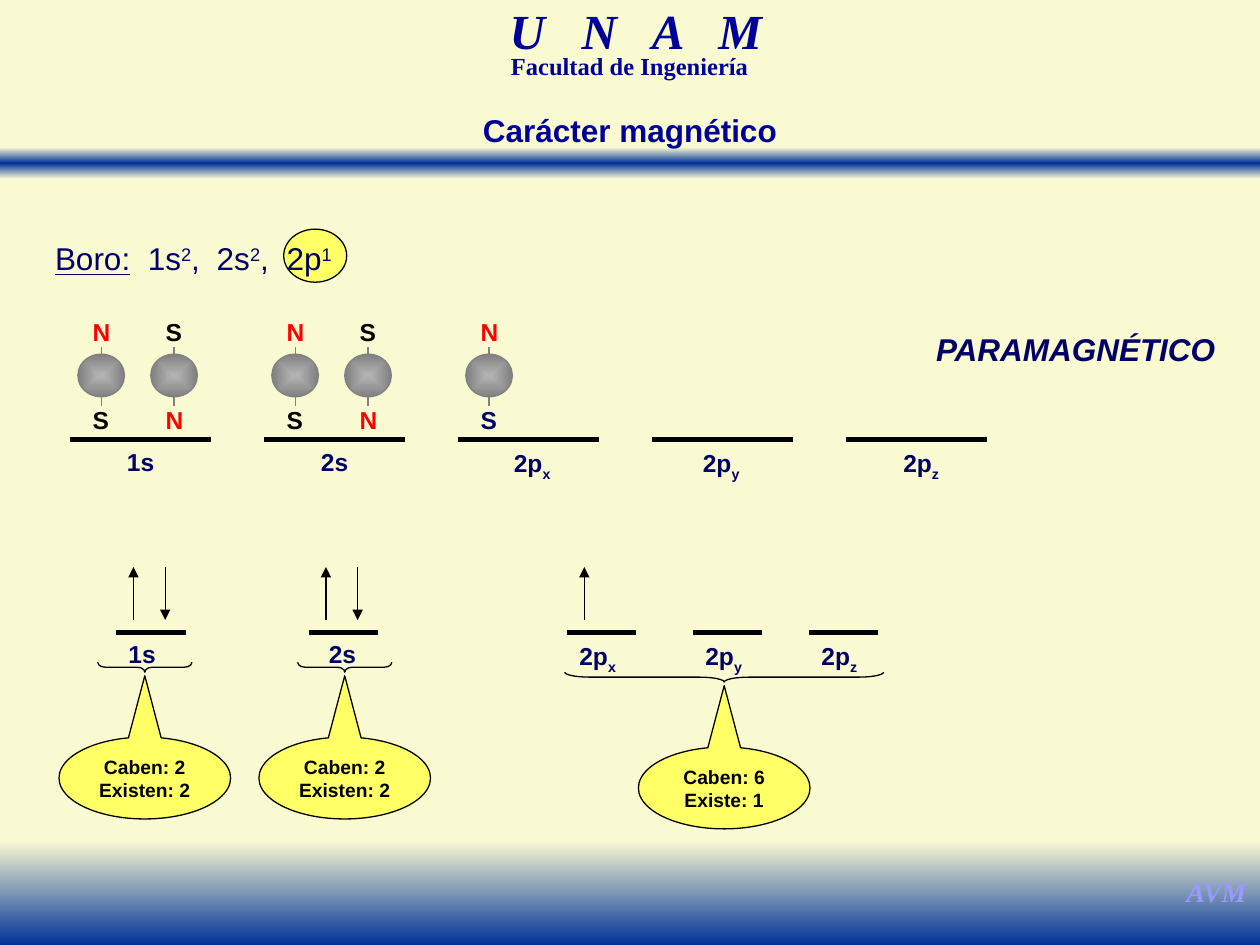
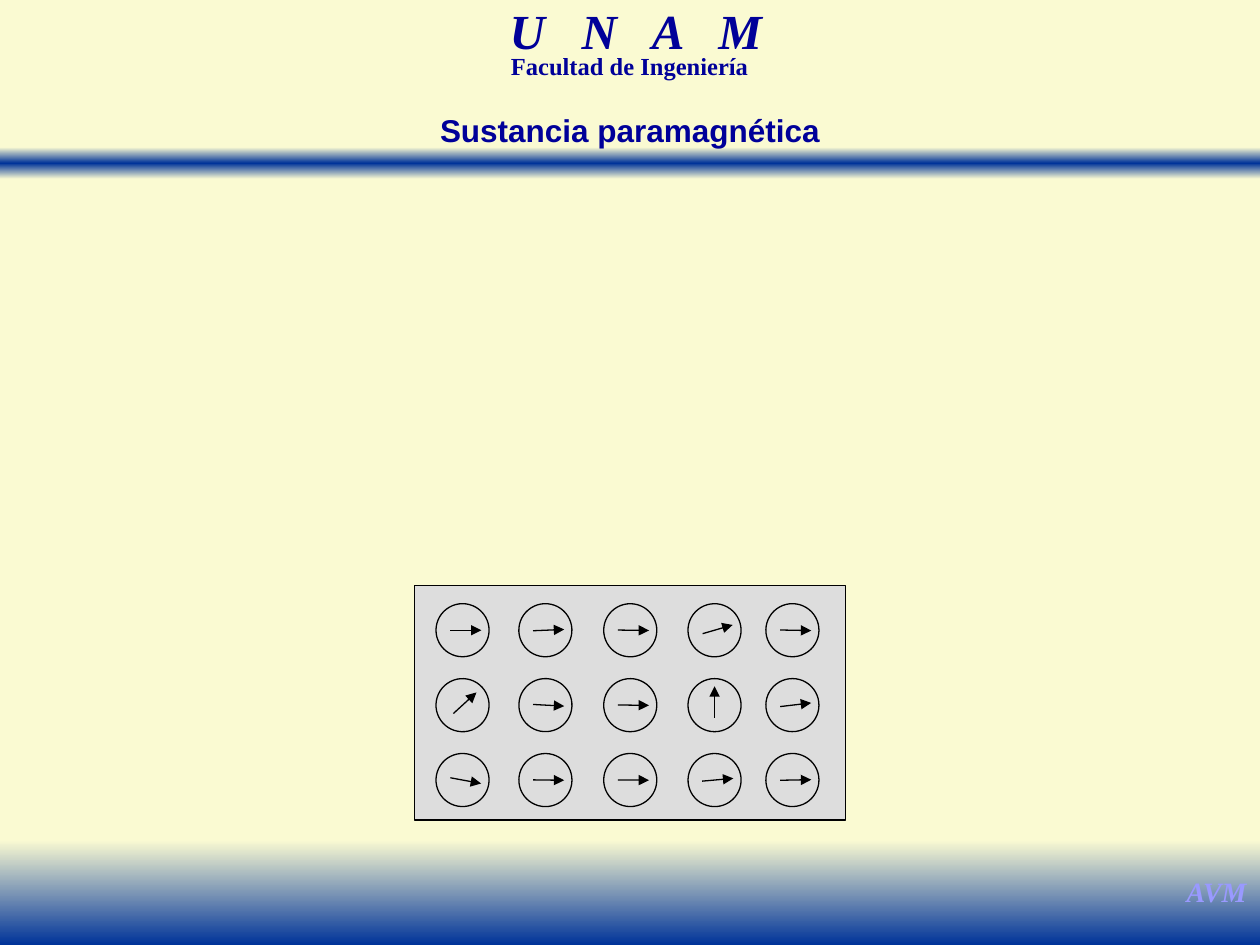
from dataclasses import dataclass, replace
from math import cos, radians, sin
from typing import NamedTuple

from lxml.etree import SubElement
from pptx import Presentation
from pptx.dml.color import RGBColor
from pptx.enum.shapes import MSO_CONNECTOR, MSO_SHAPE as Preset
from pptx.enum.text import MSO_ANCHOR, PP_ALIGN as Align
from pptx.oxml.ns import qn
from pptx.util import Cm, Pt

CREAM = RGBColor(0xFA, 0xFA, 0xD2)
BAND_BLUE = RGBColor(0x00, 0x33, 0x99)
TITLE_BLUE = RGBColor(0x00, 0x00, 0x99)
NAVY = RGBColor(0x00, 0x00, 0x66)
LILAC = RGBColor(0x99, 0x99, 0xFF)
YELLOW = RGBColor(0xFF, 0xFF, 0x66)
RED = RGBColor(0xFF, 0x00, 0x00)
BLACK = RGBColor(0x00, 0x00, 0x00)
LIGHT_GRAY = RGBColor(0xDD, 0xDD, 0xDD)
SPHERE_GRAY = RGBColor(0xB4, 0xB4, 0xB4)
GRAY = RGBColor(0x80, 0x80, 0x80)

SLIDE_WIDTH, SLIDE_HEIGHT = 25.4, 19.05
THIN, THICK = 0.75, 3


class Box(NamedTuple):
    left: float
    top: float
    width: float
    height: float

    def lengths(self) -> tuple:
        return tuple(Cm(value) for value in self)


@dataclass(frozen=True)
class TextStyle:
    size: int
    color: RGBColor
    font: str = "Arial"
    bold: bool = True
    italic: bool = False
    line_spacing: float = 1.0
    align: Align = Align.LEFT


class Magnet(NamedTuple):
    top: str
    bottom: str
    south_color: RGBColor = BLACK


class Orbital(NamedTuple):
    name: str
    axis: str
    label_offset: float
    magnets: tuple
    spin_left: float
    spin_label_offset: float = 0


class Capacity(NamedTuple):
    center: float
    brace_middle: float
    brace_length: float
    lines: str


UNIVERSITY = TextStyle(28, TITLE_BLUE, "Times New Roman", italic=True, line_spacing=0.7, align=Align.CENTER)
FACULTY = replace(UNIVERSITY, size=14, italic=False)
INITIALS = TextStyle(16, LILAC, "Times New Roman", italic=True, align=Align.CENTER)
TITLE = TextStyle(18, TITLE_BLUE, align=Align.CENTER)
CONFIGURATION = TextStyle(18, NAVY, bold=False, line_spacing=1.5)
VERDICT = replace(CONFIGURATION, bold=True, italic=True)
ORBITAL_LABEL = TextStyle(14, NAVY, line_spacing=1.5)
POLE = TextStyle(14, BLACK)
CALLOUT = TextStyle(11, BLACK, align=Align.CENTER)

UP, DOWN = Magnet("N", "S"), Magnet("S", "N")
ORBITALS = (
    Orbital("1s", "", 0.89, (UP, DOWN), 2.34),
    Orbital("2s", "", 0.89, (UP, DOWN), 6.22, 0.16),
    Orbital("2p", "x", 0.87, (Magnet("N", "S", NAVY),), 11.43),
    Orbital("2p", "y", 0.77, (), 13.97),
    Orbital("2p", "z", 0.9, (), 16.31),
)
CAPACITIES = (
    Capacity(2.92, 13.45, 1.9, "Caben: 2\nExisten: 2"),
    Capacity(6.95, 13.45, 1.9, "Caben: 2\nExisten: 2"),
    Capacity(14.6, 13.65, 6.43, "Caben: 6\nExiste: 1"),
)
ELECTRON_SHELLS = (("\t1s", "2"), (",\t2s", "2"), (",\t2p", "1"))
SHELL_TABS = (1.87, 3.26, 4.67)

ATOM_COLUMNS = (8.79, 10.46, 12.17, 13.87, 15.44)
ATOM_ANGLES = (
    (0, -2.3, 0.8, -16.2, 1.1),
    (-42.4, 3, 0.7, -90, -6.8),
    (10.5, 0.7, 0.5, -5.1, -1),
)


def format_paragraph(paragraph, style: TextStyle) -> None:
    paragraph.alignment = style.align
    paragraph.line_spacing = style.line_spacing
    for run in paragraph.runs:
        font = run.font
        font.name, font.size = style.font, Pt(style.size)
        font.bold, font.italic = style.bold, style.italic
        font.color.rgb = style.color


def set_run_attribute(run, name: str, value: int) -> None:
    run._r.get_or_add_rPr().set(name, str(value))


def add_run(paragraph, text: str, baseline: int = 0):
    run = paragraph.add_run()
    run.text = text
    if baseline:
        set_run_attribute(run, "baseline", baseline)
    return run


def add_text(slide, box: Box, text: str, style: TextStyle, subscript: str = "", wrap: bool = True):
    text_frame = slide.shapes.add_textbox(*box.lengths()).text_frame
    text_frame.word_wrap = wrap
    text_frame.text = text
    paragraph = text_frame.paragraphs[0]
    if subscript:
        add_run(paragraph, subscript, -25000)
    format_paragraph(paragraph, style)
    return paragraph


def add_shape(slide, preset: Preset, box: Box, fill: RGBColor | None = None, line: RGBColor | None = BLACK):
    shape = slide.shapes.add_shape(preset, *box.lengths())
    shape.shadow.inherit = False
    if fill is None:
        shape.fill.background()
    else:
        shape.fill.solid()
        shape.fill.fore_color.rgb = fill
    if line is None:
        shape.line.fill.background()
    else:
        shape.line.color.rgb = line
        shape.line.width = Pt(THIN)
    return shape


def set_gradient(shape, colors: tuple, radial: bool = False) -> None:
    shape.fill.gradient()
    gradient = shape.element.spPr.find(qn("a:gradFill"))
    for child in list(gradient):
        gradient.remove(child)
    stops = SubElement(gradient, qn("a:gsLst"))
    for index, color in enumerate(colors):
        stop = SubElement(stops, qn("a:gs"), pos=str(100000 * index // (len(colors) - 1)))
        SubElement(stop, qn("a:srgbClr"), val=str(color))
    if radial:
        direction = SubElement(gradient, qn("a:path"), path="shape")
        SubElement(direction, qn("a:fillToRect"), l="50000", t="50000", r="50000", b="50000")
    else:
        SubElement(gradient, qn("a:lin"), ang="5400000", scaled="1")


def add_line(slide, start: tuple, end: tuple, color: RGBColor = BLACK,
             width: float = THIN, arrow: bool = False) -> None:
    ends = (Cm(value) for value in (*start, *end))
    connector = slide.shapes.add_connector(MSO_CONNECTOR.STRAIGHT, *ends)
    connector.line.color.rgb = color
    connector.line.width = Pt(width)
    properties = connector.element.spPr
    if arrow:
        SubElement(properties.find(qn("a:ln")), qn("a:tailEnd"), type="triangle")
    SubElement(properties, qn("a:effectLst"))


def add_base_slide(presentation, title: str):
    slide = presentation.slides.add_slide(presentation.slide_layouts[6])
    bands = (
        (Box(0, 2.97, SLIDE_WIDTH, 0.64), (CREAM, BAND_BLUE, CREAM)),
        (Box(0, 16.94, SLIDE_WIDTH, 2.11), (CREAM, BAND_BLUE)),
    )
    for box, colors in bands:
        set_gradient(add_shape(slide, Preset.RECTANGLE, box, line=None), colors)
    university = add_text(slide, Box(7.84, 0.2, 9.96, 1.09), "U N A M", UNIVERSITY)
    set_run_attribute(university.runs[0], "spc", 700)
    add_text(slide, Box(8.15, 1.07, 9.09, 0.66), "Facultad de Ingeniería", FACULTY)
    add_text(slide, Box(23.65, 17.5, 1.75, 0.94), "AVM", INITIALS, wrap=False)
    add_text(slide, Box(7.2, 2.11, 11, 1.02), title, TITLE)
    return slide


def draw_configuration(slide) -> None:
    add_shape(slide, Preset.OVAL, Box(5.72, 4.62, 1.27, 1.07), YELLOW)
    paragraph = add_text(slide, Box(0.86, 4.32, 6.4, 1.4), "Boro:", CONFIGURATION)
    tabs = SubElement(paragraph._p.get_or_add_pPr(), qn("a:tabLst"))
    for position in SHELL_TABS:
        SubElement(tabs, qn("a:tab"), pos=str(Cm(position)), algn="l")
    for shell, electrons in ELECTRON_SHELLS:
        add_run(paragraph, shell)
        add_run(paragraph, electrons, 30000)
    format_paragraph(paragraph, CONFIGURATION)
    paragraph.runs[0].font.underline = True


def draw_magnet(slide, magnet: Magnet, left: float) -> None:
    sphere = add_shape(slide, Preset.OVAL, Box(left, 7.14, 0.94, 0.86), line=GRAY)
    set_gradient(sphere, (SPHERE_GRAY, GRAY), radial=True)
    for start, end in ((8, 8.18), (7.14, 6.99)):
        add_line(slide, (left + 0.47, start), (left + 0.47, end), GRAY)
    for pole, top in ((magnet.top, 6.27), (magnet.bottom, 8.05)):
        color = RED if pole == "N" else magnet.south_color
        add_text(slide, Box(left + 0.05, top, 0.64, 0.84), pole, replace(POLE, color=color))


def draw_level(slide, orbital: Orbital, left: float, top: float, length: float, label_offset: float) -> None:
    add_line(slide, (left, top), (left + length, top), width=THICK)
    label = Box(left + label_offset, top - 0.28, 1.37, 1.14)
    add_text(slide, label, orbital.name, ORBITAL_LABEL, orbital.axis)


def draw_orbital(slide, orbital: Orbital, index: int) -> None:
    left = 1.42 + 3.91 * index
    draw_level(slide, orbital, left, 8.86, 2.84, orbital.label_offset)
    draw_level(slide, orbital, orbital.spin_left, 12.75, 1.4, orbital.spin_label_offset)
    for position, magnet in enumerate(orbital.magnets):
        draw_magnet(slide, magnet, left + 0.15 + 1.47 * position)
        spin = orbital.spin_left + 0.35 + 0.64 * position
        start, end = (12.5, 11.43) if magnet.top == "N" else (11.43, 12.5)
        add_line(slide, (spin, start), (spin, end), arrow=True)


def draw_capacity(slide, capacity: Capacity) -> None:
    thickness = 0.2
    brace_box = Box(capacity.center - thickness / 2, capacity.brace_middle - capacity.brace_length / 2,
                    thickness, capacity.brace_length)
    brace = add_shape(slide, Preset.LEFT_BRACE, brace_box)
    brace.rotation = 270
    brace.adjustments[0] = 0.4 * capacity.brace_length
    callout_box = Box(capacity.center - 1.73, capacity.brace_middle + 1.41, 3.46, 1.65)
    callout = add_shape(slide, Preset.OVAL_CALLOUT, callout_box, YELLOW)
    callout.adjustments[0], callout.adjustments[1] = 0, -1.25
    text_frame = callout.text_frame
    text_frame.margin_left = text_frame.margin_right = Cm(0)
    text_frame.vertical_anchor = MSO_ANCHOR.MIDDLE
    text_frame.word_wrap = True
    text_frame.text = capacity.lines
    for paragraph in text_frame.paragraphs:
        format_paragraph(paragraph, CALLOUT)


def draw_atom(slide, left: float, top: float, angle: float) -> None:
    diameter = 1.07
    circle = add_shape(slide, Preset.OVAL, Box(left, top, diameter, diameter), LIGHT_GRAY)
    circle.rotation = angle
    center_x, center_y = left + diameter / 2, top + diameter / 2
    start, end = (
        (center_x + reach * cos(radians(angle)), center_y + reach * sin(radians(angle)))
        for reach in (-0.25, 0.38)
    )
    add_line(slide, start, end, arrow=True)


def build_magnetic_character(presentation) -> None:
    slide = add_base_slide(presentation, "Carácter magnético")
    draw_configuration(slide)
    add_text(slide, Box(18.62, 6.15, 6.32, 1.4), "PARAMAGNÉTICO", VERDICT)
    for index, orbital in enumerate(ORBITALS):
        draw_orbital(slide, orbital, index)
    for capacity in CAPACITIES:
        draw_capacity(slide, capacity)


def build_paramagnetic_substance(presentation) -> None:
    slide = add_base_slide(presentation, "Sustancia paramagnética")
    add_shape(slide, Preset.RECTANGLE, Box(8.36, 11.81, 8.69, 4.72), LIGHT_GRAY)
    for row, angles in enumerate(ATOM_ANGLES):
        for left, angle in zip(ATOM_COLUMNS, angles):
            draw_atom(slide, left, 12.17 + 1.51 * row, angle)


def main() -> None:
    presentation = Presentation()
    presentation.slide_width, presentation.slide_height = Cm(SLIDE_WIDTH), Cm(SLIDE_HEIGHT)
    background = presentation.slide_master.background.fill
    background.solid()
    background.fore_color.rgb = CREAM
    build_magnetic_character(presentation)
    build_paramagnetic_substance(presentation)
    presentation.save("out.pptx")


if __name__ == "__main__":
    main()
